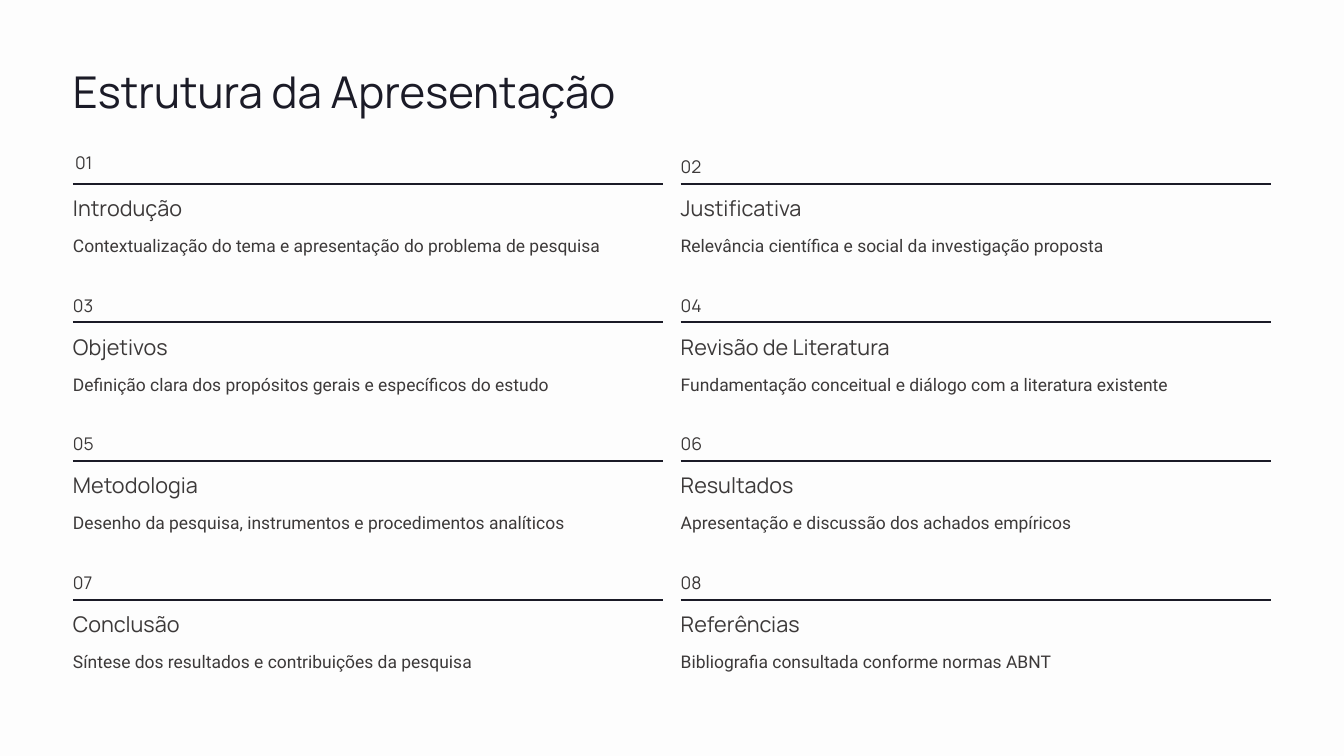
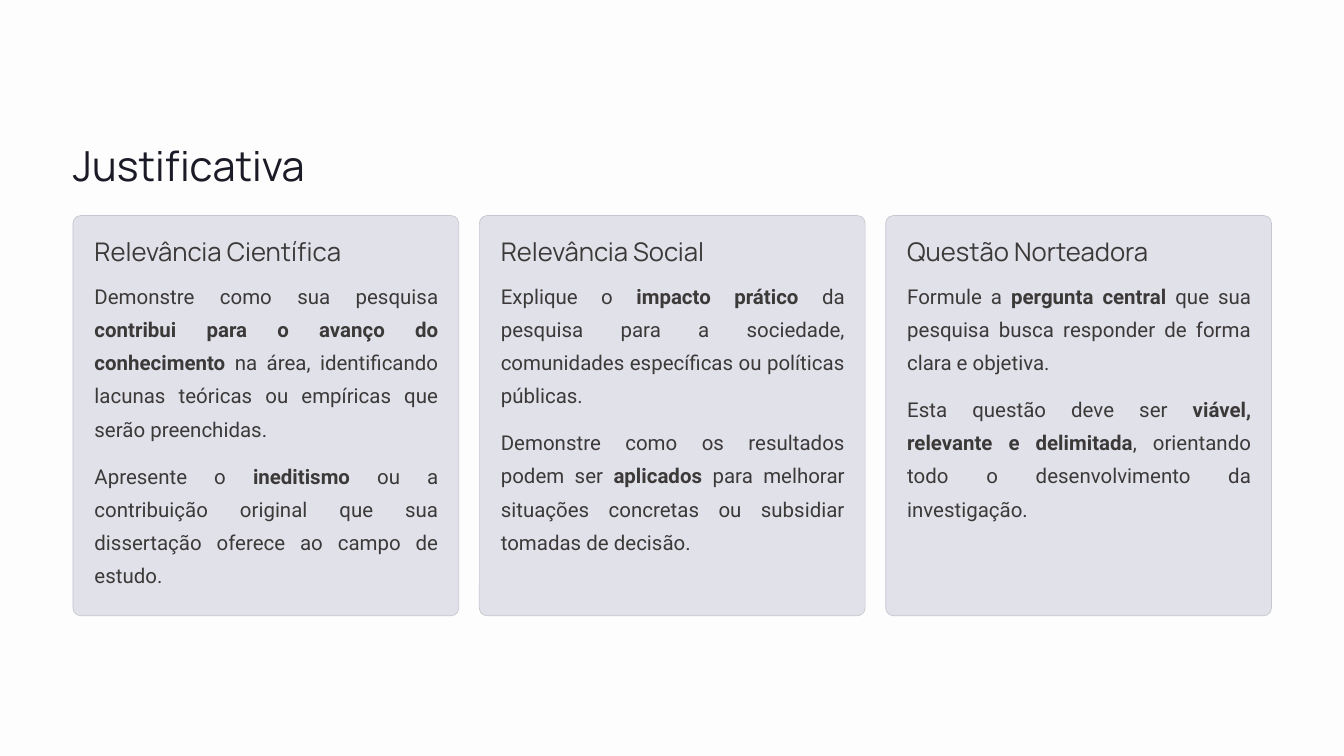
from pptx import Presentation
from pptx.dml.color import RGBColor
from pptx.enum.shapes import MSO_CONNECTOR as Connector, MSO_SHAPE as Shape
from pptx.enum.text import MSO_AUTO_SIZE as AutoSize, PP_ALIGN as Align
from pptx.oxml.ns import qn
from pptx.util import Cm, Pt
from lxml import etree

# Colours and fonts
BLACK = RGBColor(0x00, 0x00, 0x00)
TINT = RGBColor(0xEC, 0xEC, 0xF3)
WHITE = RGBColor(0xFF, 0xFF, 0xFF)
INK = RGBColor(0x1B, 0x1B, 0x27)
BODY = RGBColor(0x3C, 0x39, 0x39)
CARD_FILL = RGBColor(0xE1, 0xE1, 0xEA)
CARD_LINE = RGBColor(0xC7, 0xC7, 0xD0)
HEAD_FONT = "Manrope"
BODY_FONT = "Roboto"

# Text styles: font, size, line spacing, colour
NUMBER = (HEAD_FONT, 18.7, 30, BODY)
TOPIC = (HEAD_FONT, 23.1, 29.4, BODY)
DETAIL = (BODY_FONT, 18.7, 30, BODY)
CARD_HEAD = (HEAD_FONT, 27.5, 34.4, BODY)
CARD_TEXT = (BODY_FONT, 21.9, 35.6, BODY)

# Shared measures in centimetres
PAGE_WIDTH, PAGE_HEIGHT = 50.8, 28.58
MARGIN = 2.76

# Agenda grid
COLUMN_STEP, COLUMN_WIDTH = 22.97, 22.3
ROW_TOP, ROW_STEP = 6.95, 5.24
TOPICS = [
    ("Introdução", "Contextualização do tema e apresentação do problema de pesquisa"),
    ("Justificativa", "Relevância científica e social da investigação proposta"),
    ("Objetivos", "Definição clara dos propósitos gerais e específicos do estudo"),
    ("Revisão de Literatura", "Fundamentação conceitual e diálogo com a literatura existente"),
    ("Metodologia", "Desenho da pesquisa, instrumentos e procedimentos analíticos"),
    ("Resultados", "Apresentação e discussão dos achados empíricos"),
    ("Conclusão", "Síntese dos resultados e contribuições da pesquisa"),
    ("Referências", "Bibliografia consultada conforme normas ABNT"),
]

# Cards: heading, then (line count, text); ** marks bold
CARD_TOP, CARD_WIDTH, CARD_HEIGHT = 8.15, 14.58, 15.13
CARD_STEP, CARD_PAD = 15.36, 0.81
TEXT_WIDTH = 13
LINE_HEIGHT, TEXT_GAP = 1.26, 0.5
CARDS = [
    ("Relevância Científica", [
        (5, "Demonstre como sua pesquisa **contribui para o avanço do conhecimento** "
            "na área, identificando lacunas teóricas ou empíricas que serão preenchidas."),
        (4, "Apresente o **ineditismo** ou a contribuição original que sua dissertação "
            "oferece ao campo de estudo."),
    ]),
    ("Relevância Social", [
        (4, "Explique o **impacto prático** da pesquisa para a sociedade, "
            "comunidades específicas ou políticas públicas."),
        (4, "Demonstre como os resultados podem ser **aplicados** para melhorar "
            "situações concretas ou subsidiar tomadas de decisão."),
    ]),
    ("Questão Norteadora", [
        (3, "Formule a **pergunta central** que sua pesquisa busca responder "
            "de forma clara e objetiva."),
        (4, "Esta questão deve ser **viável, relevante e delimitada**, "
            "orientando todo o desenvolvimento da investigação."),
    ]),
]


class Builder:
    """Holds the deck and the slide being filled."""

    def __init__(self):
        self.deck = Presentation()
        self.deck.slide_width, self.deck.slide_height = Cm(PAGE_WIDTH), Cm(PAGE_HEIGHT)
        self.page = None

    def new_page(self):
        self.page = self.deck.slides.add_slide(self.deck.slide_layouts[6])
        fill = self.page.background.fill
        fill.solid()
        fill.fore_color.rgb = BLACK
        # A tint softened by a nearly opaque white veil
        self.panel(Shape.RECTANGLE, 0, 0, PAGE_WIDTH, PAGE_HEIGHT, TINT)
        veil = self.panel(Shape.RECTANGLE, 0, 0, PAGE_WIDTH, PAGE_HEIGHT, WHITE)
        colour = veil._element.spPr.find(qn("a:solidFill"))[0]
        etree.SubElement(colour, qn("a:alpha"), val="90000")

    def panel(self, kind, left, top, width, height, colour):
        panel = self.page.shapes.add_shape(
            kind, Cm(left), Cm(top), Cm(width), Cm(height))
        panel.shadow.inherit = False
        panel.fill.solid()
        panel.fill.fore_color.rgb = colour
        panel.line.fill.background()
        return panel

    def text(self, left, top, width, height, content, style, align=Align.LEFT):
        box = self.page.shapes.add_textbox(Cm(left), Cm(top), Cm(width), Cm(height))
        frame = box.text_frame
        frame.word_wrap = True
        frame.auto_size = AutoSize.SHAPE_TO_FIT_TEXT
        frame.margin_left = frame.margin_right = 0
        frame.margin_top = frame.margin_bottom = 0
        para = frame.paragraphs[0]
        font_name, size, spacing, colour = style
        para.alignment = align
        para.line_spacing = Pt(spacing)
        para.font.name, para.font.size = font_name, Pt(size)
        para.font.color.rgb = colour
        for index, part in enumerate(content.split("**")):
            span = para.add_run()
            span.text = part
            if index % 2:
                span.font.bold = True

    def title(self, top, content, size, spacing):
        self.text(MARGIN, top, 21, 2.1, content, (HEAD_FONT, size, spacing, INK))

    def rule(self, left, top, width):
        line = self.page.shapes.add_connector(
            Connector.STRAIGHT, Cm(left), Cm(top), Cm(left + width), Cm(top))
        line.line.color.rgb = INK
        line.line.width = Pt(2.25)
        etree.SubElement(line._element.spPr, qn("a:effectLst"))

    def card(self, left, top, width, height):
        card = self.panel(Shape.ROUNDED_RECTANGLE, left, top, width, height, CARD_FILL)
        card.adjustments[0] = 0.02
        card.line.color.rgb = CARD_LINE
        card.line.width = Pt(0.75)


def add_agenda(builder):
    builder.new_page()
    builder.title(2.36, "Estrutura da Apresentação", 46.9, 58.7)
    for index, (topic, detail) in enumerate(TOPICS):
        row, column = divmod(index, 2)
        left = MARGIN + column * COLUMN_STEP
        top = ROW_TOP + row * ROW_STEP
        # The first number sits slightly up and to the right
        right, up = (0.08, 0.13) if index == 0 else (0, 0)
        builder.text(left + right, top - 1.32 - up, 1.2, 1.04, f"{index + 1:02}", NUMBER)
        builder.rule(left, top, COLUMN_WIDTH)
        builder.text(left, top + 0.37, 8.36, 1.12, topic, TOPIC)
        builder.text(left, top + 1.67, COLUMN_WIDTH, 1.32, detail, DETAIL)


def add_justification(builder):
    builder.new_page()
    builder.title(5.21, "Justificativa", 44.4, 55.6)
    for index, (heading, passages) in enumerate(CARDS):
        left = MARGIN + index * CARD_STEP
        builder.card(left, CARD_TOP, CARD_WIDTH, CARD_HEIGHT)
        text_left = left + CARD_PAD
        builder.text(text_left, 8.86, TEXT_WIDTH, 1.32, heading, CARD_HEAD)
        top = 10.4
        for lines, passage in passages:
            height = lines * LINE_HEIGHT
            builder.text(text_left, top, TEXT_WIDTH, height, passage,
                         CARD_TEXT, Align.JUSTIFY)
            top += height + TEXT_GAP


def main():
    builder = Builder()
    add_agenda(builder)
    add_justification(builder)
    builder.deck.save("out.pptx")


if __name__ == "__main__":
    main()
